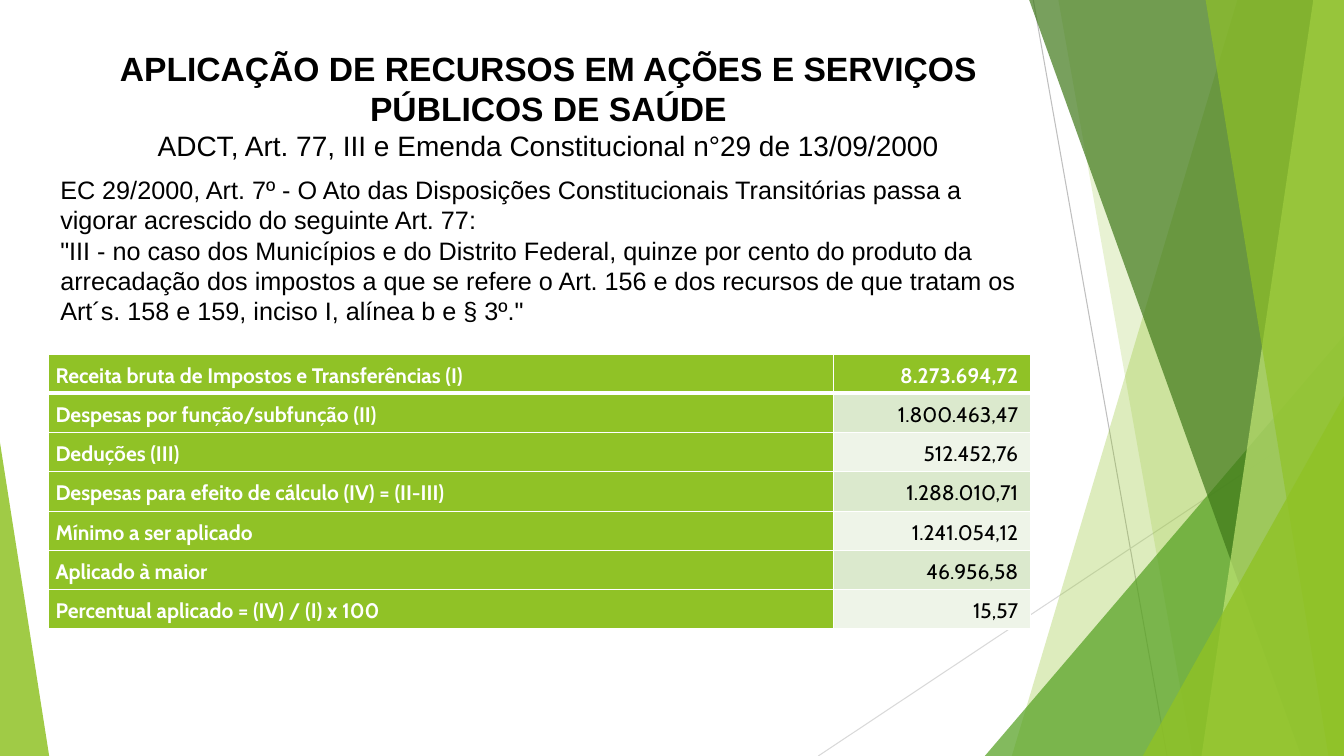
from lxml.etree import SubElement
from pptx import Presentation
from pptx.dml.color import RGBColor
from pptx.enum.shapes import MSO_CONNECTOR, MSO_SHAPE
from pptx.enum.text import MSO_ANCHOR, PP_ALIGN
from pptx.oxml.ns import qn
from pptx.util import Cm, Pt

WIDTH, HEIGHT = 33.87, 19.05
GREEN, WHITE, BLACK = "90C226", "FFFFFF", "000000"


def color(value):
    return RGBColor.from_string(value)


class SlideBuilder:
    heading_font = "Arial"
    table_font = "Cabin"

    def __init__(self, slide):
        self.slide = slide
        self.shapes = slide.shapes

    def line(self, start, end, line_color):
        connector = self.shapes.add_connector(
            MSO_CONNECTOR.STRAIGHT, *(Cm(value) for value in start + end))
        connector.line.color.rgb = color(line_color)
        connector.line.width = Pt(0.75)
        SubElement(connector._element.spPr, qn("a:effectLst"))

    def paint(self, shape, fill, opacity):
        shape.shadow.inherit = False
        shape.line.fill.background()
        shape.fill.solid()
        shape.fill.fore_color.rgb = color(fill)
        srgb = shape._element.spPr.find(qn("a:solidFill"))[0]
        SubElement(srgb, qn("a:alpha")).set("val", str(opacity * 1000))

    def band(self, top_left, bottom_left, fill, opacity):
        """Fill from a slanted left edge to the right side of the slide."""
        top = -0.02
        corners = [(WIDTH, top), (WIDTH, HEIGHT), (bottom_left, HEIGHT)]
        builder = self.shapes.build_freeform(Cm(top_left), Cm(top))
        builder.add_line_segments([(Cm(x), Cm(y)) for x, y in corners])
        self.paint(builder.convert_to_shape(), fill, opacity)

    def triangle(self, left, top, width, apex, fill, opacity):
        """Stand a triangle on the bottom of the slide."""
        shape = self.shapes.add_shape(
            MSO_SHAPE.ISOSCELES_TRIANGLE, Cm(left), Cm(top), Cm(width), Cm(HEIGHT - top))
        shape.adjustments[0] = apex
        self.paint(shape, fill, opacity)

    def text(self, left, top, width, height, paragraphs):
        frame = self.shapes.add_textbox(Cm(left), Cm(top), Cm(width), Cm(height)).text_frame
        frame.word_wrap = True
        frame.vertical_anchor = MSO_ANCHOR.MIDDLE
        for index, (content, size, bold, alignment, before) in enumerate(paragraphs):
            paragraph = frame.add_paragraph() if index else frame.paragraphs[0]
            paragraph.text = content
            paragraph.alignment = alignment
            paragraph.space_before = Pt(before)
            self.style(paragraph, self.heading_font, size, bold, BLACK)

    def style(self, paragraph, name, size, bold, font_color):
        font = paragraph.font
        font.name, font.size, font.bold = name, Pt(size), bold
        font.color.rgb = color(font_color)

    def table(self, left, top, widths, row_height, rows):
        table = self.shapes.add_table(
            len(rows), len(widths), Cm(left), Cm(top),
            Cm(sum(widths)), Cm(row_height * len(rows))).table
        for column, width in zip(table.columns, widths):
            column.width = Cm(width)
        for row_index, values in enumerate(rows):
            table.rows[row_index].height = Cm(row_height)
            for column_index, value in enumerate(values):
                strong = row_index == 0 or column_index == 0
                fill = GREEN if strong else ("EEF4E8", "DBE9CD")[row_index % 2]
                cell = table.cell(row_index, column_index)
                self.borders(cell, top=3 if row_index == 1 else 1,
                             bottom=3 if row_index == 0 else 1)
                cell.fill.solid()
                cell.fill.fore_color.rgb = color(fill)
                cell.vertical_anchor = MSO_ANCHOR.MIDDLE
                cell.margin_left = cell.margin_right = Cm(0.18)
                cell.margin_top = cell.margin_bottom = Cm(0.03)
                paragraph = cell.text_frame.paragraphs[0]
                paragraph.text = value
                paragraph.line_spacing = 1.15
                paragraph.alignment = PP_ALIGN.RIGHT if column_index else PP_ALIGN.LEFT
                self.style(paragraph, self.table_font, 15, strong, WHITE if strong else BLACK)

    def borders(self, cell, top, bottom):
        properties = cell._tc.get_or_add_tcPr()
        for side, width in (("L", 1), ("R", 1), ("T", top), ("B", bottom)):
            edge = SubElement(properties, qn(f"a:ln{side}"), w=str(Pt(width)))
            fill = SubElement(edge, qn("a:solidFill"))
            SubElement(fill, qn("a:srgbClr"), val=WHITE)


def main():
    presentation = Presentation()
    presentation.slide_width, presentation.slide_height = Cm(WIDTH), Cm(HEIGHT)
    page = SlideBuilder(presentation.slides.add_slide(presentation.slide_layouts[6]))

    # Green facets at the sides
    page.line((26.04, 0), (29.41, HEIGHT), "BFBFBF")
    page.line((WIDTH, 10.24), (20.62, HEIGHT), "D9D9D9")
    page.band(31.19, 25.5, GREEN, 30)
    page.band(26.67, 30.05, GREEN, 20)
    page.triangle(24.82, 8.46, 9.05, 1, "54A021", 72)
    page.band(25.93, 32.79, "3F7819", 70)
    page.band(33.1, 30.28, "C0E474", 70)
    page.band(30.38, 33.48, GREEN, 65)
    page.triangle(28.8, 9.98, 5.07, 1, GREEN, 80)
    page.triangle(0, 11.15, 1.24, 0, GREEN, 85)

    # Health spending figures
    page.table(1.22, 8.92, (19.79, 4.95), 0.99, [
        ("Receita bruta de Impostos e Transferências (I)", "8.273.694,72 "),
        ("Despesas por função/subfunção (II)", "1.800.463,47 "),
        ("Deduções (III)", "512.452,76 "),
        ("Despesas para efeito de cálculo (IV) = (II-III)", "1.288.010,71 "),
        ("Mínimo a ser aplicado", "1.241.054,12 "),
        ("Aplicado à maior", "46.956,58 "),
        ("Percentual aplicado = (IV) / (I) x 100", "15,57 "),
    ])

    # Title and legal basis
    center, left = PP_ALIGN.CENTER, PP_ALIGN.LEFT
    page.text(1.27, 1.02, 25.1, 7.37, [
        ("APLICAÇÃO DE RECURSOS EM AÇÕES E SERVIÇOS PÚBLICOS DE SAÚDE", 24, True, center, 0),
        ("ADCT, Art. 77, III e Emenda Constitucional n°29 de 13/09/2000", 20, False, center, 0),
        ("EC 29/2000, Art. 7º - O Ato das Disposições Constitucionais Transitórias passa a "
         "vigorar acrescido do seguinte Art. 77:", 18, False, left, 9),
        ("\"III - no caso dos Municípios e do Distrito Federal, quinze por cento do produto da "
         "arrecadação dos impostos a que se refere o Art. 156 e dos recursos de que tratam os "
         "Art´s. 158 e 159, inciso I, alínea b e § 3º.\"", 18, False, left, 0),
    ])

    presentation.save("out.pptx")


if __name__ == "__main__":
    main()
